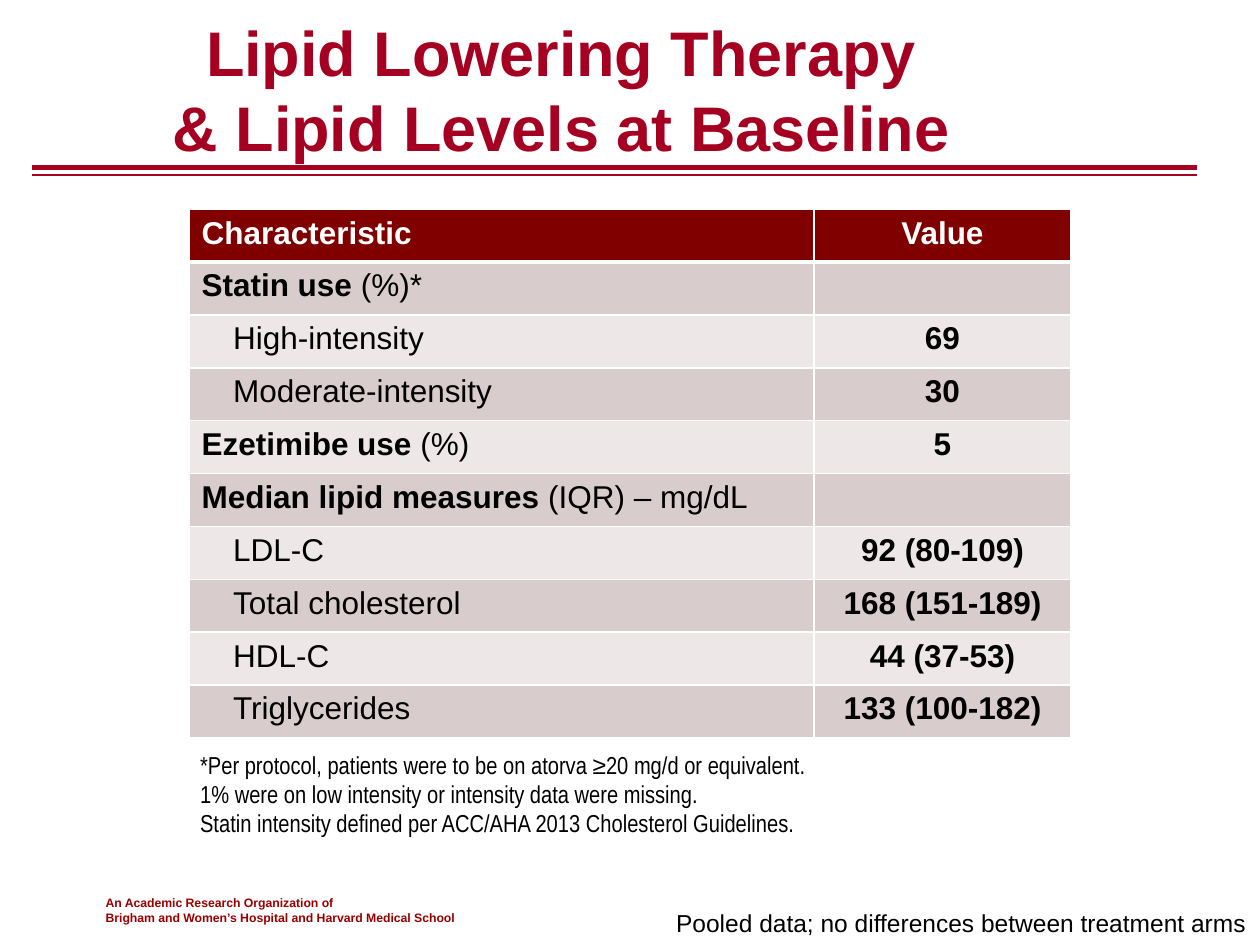
import pptx
import pptx.util
import pptx.dml.color
import pptx.enum.shapes
import pptx.enum.text
import pptx.oxml
import pptx.oxml.ns
from dataclasses import dataclass

Inches = pptx.util.Inches
Pt = pptx.util.Pt
Align = pptx.enum.text.PP_ALIGN
NS = pptx.oxml.ns.nsdecls("a")


@dataclass(frozen=True)
class Theme:
    """Colours, fonts and type sizes of the slide."""
    red: str = "A50021"
    brick: str = "990000"
    head: str = "800000"
    dark: str = "D8CCCC"
    light: str = "EDE7E7"
    white: str = "FFFFFF"
    black: str = "000000"
    sans: str = "Arial"
    slim: str = "Arial Narrow"
    title: int = 36
    cell: int = 18
    note: int = 14
    org: int = 7


THEME = Theme()
ROWS = [
    ("Statin use ", "(%)*", ""),
    ("", "\tHigh-intensity", "69"),
    ("", "\tModerate-intensity", "30"),
    ("Ezetimibe use ", "(%)", "5"),
    ("Median lipid measures ", "(IQR) – mg/dL", ""),
    ("", "\tLDL-C", "92 (80-109)"),
    ("", "\tTotal cholesterol", "168 (151-189)"),
    ("", "\tHDL-C", "44 (37-53)"),
    ("", "\tTriglycerides", "133 (100-182)"),
]
NOTES = [
    "*Per protocol, patients were to be on atorva ≥20 mg/d or equivalent.",
    "1% were on low intensity or intensity data were missing.",
    "Statin intensity defined per ACC/AHA 2013 Cholesterol Guidelines.",
]
ORG = [
    "An Academic Research Organization of",
    "Brigham and Women’s Hospital and Harvard Medical School",
]


def rgb(hue):
    """Return a colour from its hex value."""
    return pptx.dml.color.RGBColor.from_string(hue)


def style(run, size, hue, bold=False, face=THEME.sans):
    """Format one run of text."""
    for key, val in {"size": Pt(size), "bold": bold, "name": face}.items():
        setattr(run.font, key, val)
    run.font.color.rgb = rgb(hue)


def place(shape, box):
    """Move and size a shape, in inches."""
    for key, val in zip(("left", "top", "width", "height"), box):
        setattr(shape, key, Inches(val))


def add_title(slide, text):
    """Fill the title placeholder."""
    shape = slide.shapes.title
    place(shape, (0.83, 0.08, 7.25, 1.25))
    frame = shape.text_frame
    frame.auto_size = pptx.enum.text.MSO_AUTO_SIZE.NONE
    frame.vertical_anchor = pptx.enum.text.MSO_ANCHOR.MIDDLE
    para = frame.paragraphs[0]
    para.text = text
    para.alignment = Align.CENTER
    for run in para.runs:
        style(run, THEME.title, THEME.red, True)


def add_rule(slide, top, width):
    """Draw a level line below the title."""
    kind = pptx.enum.shapes.MSO_CONNECTOR.STRAIGHT
    rule = slide.shapes.add_connector(
        kind, Inches(0.25), Inches(top), Inches(9.5), Inches(top))
    rule.line.color.rgb = rgb(THEME.red)
    rule.line.width = Pt(width)
    rule._element.spPr.append(pptx.oxml.parse_xml(f"<a:effectLst {NS}/>"))


def add_text(slide, box, lines, form, wrap=True, align=Align.LEFT, hang=0):
    """Add a text box with one paragraph a line."""
    shape = slide.shapes.add_textbox(*map(Inches, box))
    frame = shape.text_frame
    frame.word_wrap = wrap
    for num, line in enumerate(lines):
        para = frame.add_paragraph() if num else frame.paragraphs[0]
        para.alignment = align
        if hang:
            props = para._p.get_or_add_pPr()
            props.set("marL", str(Inches(hang)))
            props.set("indent", str(-Inches(hang)))
        run = para.add_run()
        run.text = line
        style(run, **form)


def edge(cell, row):
    """Give a cell white borders, thick below the header."""
    wide = {"L": 1, "R": 1, "T": 3 if row == 1 else 1, "B": 1 if row else 3}
    props = cell._tc.get_or_add_tcPr()
    for side, width in wide.items():
        props.append(pptx.oxml.parse_xml(
            f'<a:ln{side} {NS} w="{Pt(width)}"><a:solidFill>'
            f'<a:srgbClr val="{THEME.white}"/></a:solidFill></a:ln{side}>'))


def fill_cell(cell, row, parts, align):
    """Write bold and plain parts in a cell and colour it."""
    edge(cell, row)
    cell.fill.solid()
    shade = (THEME.dark if row % 2 else THEME.light) if row else THEME.head
    cell.fill.fore_color.rgb = rgb(shade)
    para = cell.text_frame.paragraphs[0]
    para.alignment = align
    for text, bold in parts:
        if text.startswith("\t"):
            para._p.get_or_add_pPr().append(pptx.oxml.parse_xml(
                f'<a:tabLst {NS}><a:tab pos="{Inches(0.25)}" algn="l"/></a:tabLst>'))
        if text:
            run = para.add_run()
            run.text = text
            style(run, THEME.cell, THEME.black if row else THEME.white, bold)


def add_grid(slide):
    """Build the table of baseline values."""
    data = [("Characteristic", "", "Value")] + ROWS
    box = map(Inches, (1.5, 1.66, 7, 4.2))
    grid = slide.shapes.add_table(len(data), 2, *box).table
    for col, width in zip(grid.columns, (4.96, 2.04)):
        col.width = Inches(width)
    for row, (lead, rest, value) in enumerate(data):
        grid.rows[row].height = Inches(0.42)
        fill_cell(grid.cell(row, 0), row, [(lead, True), (rest, False)], Align.LEFT)
        fill_cell(grid.cell(row, 1), row, [(value, True)], Align.CENTER)


def main():
    """Build and save the slide."""
    deck = pptx.Presentation()
    deck.slide_width, deck.slide_height = Inches(10), Inches(7.5)
    slide = deck.slides.add_slide(deck.slide_layouts[5])
    add_text(slide, (0.74, 7.06, 4.33, 0.33), ORG,
             {"size": THEME.org, "hue": THEME.brick, "bold": True})
    for top, width in ((1.33, 3), (1.39, 1.5)):
        add_rule(slide, top, width)
    add_title(slide, "Lipid Lowering Therapy\v& Lipid Levels at Baseline")
    add_grid(slide)
    note = {"size": THEME.note, "hue": THEME.black}
    add_text(slide, (5.26, 7.16, 4.74, 0.34),
             ["Pooled data; no differences between treatment arms"],
             note, wrap=False, align=Align.CENTER)
    add_text(slide, (1.49, 5.9, 7.27, 0.81), NOTES,
             {**note, "face": THEME.slim}, hang=0.19)
    deck.save("out.pptx")


if __name__ == "__main__":
    main()
